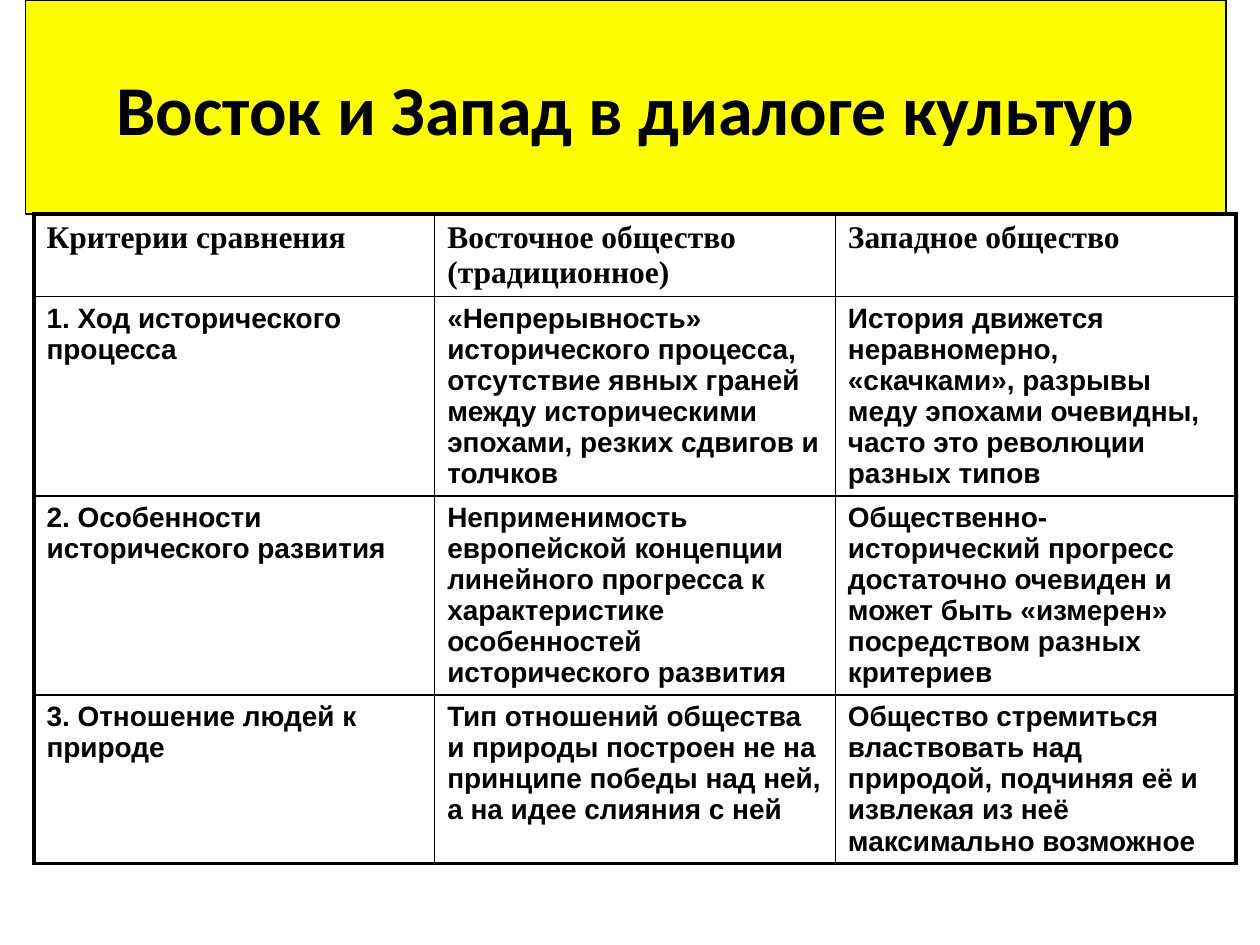
"""Build a slide comparing Eastern and Western societies in a table."""
import pptx
import pptx.dml.color
import pptx.enum.shapes
import pptx.enum.text
import pptx.oxml
import pptx.oxml.ns
import pptx.util

Inches = pptx.util.Inches
Pt = pptx.util.Pt
RGB = pptx.dml.color.RGBColor.from_string

THEME = {
    "ink": "000000",
    "banner": "FFFF00",
    "title": ("Calibri", 40),
    "header": ("Times New Roman", 18),
    "body": ("Arial", 16),
    "outer": 2.25,
    "inner": 1,
}

ROWS = [
    ("Критерии сравнения", "Восточное общество (традиционное)", "Западное общество"),
    (
        "1. Ход исторического процесса",
        "«Непрерывность» исторического процесса, отсутствие явных граней между "
        "историческими эпохами, резких сдвигов и толчков",
        "История движется неравномерно, «скачками», разрывы меду эпохами очевидны, "
        "часто это революции разных типов",
    ),
    (
        "2. Особенности исторического развития",
        "Неприменимость европейской концепции линейного прогресса к характеристике "
        "особенностей исторического развития",
        "Общественно-исторический прогресс достаточно очевиден и может быть «измерен» "
        "посредством разных критериев",
    ),
    (
        "3. Отношение людей к природе",
        "Тип отношений общества и природы построен не на принципе победы над ней, "
        "а на идее слияния с ней",
        "Общество стремиться властвовать над природой, подчиняя её и извлекая из неё "
        "максимально возможное",
    ),
]
ROW_HEIGHT = 0.62
COL_WIDTH = 3.18


def write(p, text, style):
    p.text = text
    p.font.name, size = THEME[style]
    p.font.size = Pt(size)
    p.font.bold = True
    p.font.color.rgb = RGB(THEME["ink"])


def add_border(cell, side, width):
    ns = pptx.oxml.ns.nsdecls("a")
    cell._tc.get_or_add_tcPr().append(pptx.oxml.parse_xml(
        f'<a:ln{side} {ns} w="{Pt(width)}"><a:solidFill>'
        f'<a:srgbClr val="{THEME["ink"]}"/></a:solidFill></a:ln{side}>'
    ))


prs = pptx.Presentation()
prs.slide_width, prs.slide_height = Inches(10), Inches(7.5)
s = prs.slides.add_slide(prs.slide_layouts[6])

sp = s.shapes.add_shape(
    pptx.enum.shapes.MSO_SHAPE.RECTANGLE, Inches(0.2), Inches(0), Inches(9.53), Inches(1.7)
)
sp.shadow.inherit = False
sp.fill.solid()
sp.fill.fore_color.rgb = RGB(THEME["banner"])
sp.line.color.rgb = RGB(THEME["ink"])
sp.line.width = Pt(0.75)
tf = sp.text_frame
tf.word_wrap = True
tf.vertical_anchor = pptx.enum.text.MSO_ANCHOR.MIDDLE
p = tf.paragraphs[0]
p.alignment = pptx.enum.text.PP_ALIGN.CENTER
write(p, "Восток и Запад в диалоге культур", "title")

n_rows, n_cols = len(ROWS), len(ROWS[0])
table = s.shapes.add_table(
    n_rows, n_cols, Inches(0.27), Inches(1.7),
    Inches(COL_WIDTH * n_cols), Inches(ROW_HEIGHT * n_rows),
).table
table.first_row = table.horz_banding = False
for col in table.columns:
    col.width = Inches(COL_WIDTH)

for i, texts in enumerate(ROWS):
    table.rows[i].height = Inches(ROW_HEIGHT)
    for j, text in enumerate(texts):
        cell = table.cell(i, j)
        write(cell.text_frame.paragraphs[0], text, "header" if i == 0 else "body")
        edges = {"L": j == 0, "R": j == n_cols - 1, "T": i == 0, "B": i == n_rows - 1}
        for side, is_outer in edges.items():
            add_border(cell, side, THEME["outer" if is_outer else "inner"])
        cell.fill.background()

prs.save("out.pptx")
